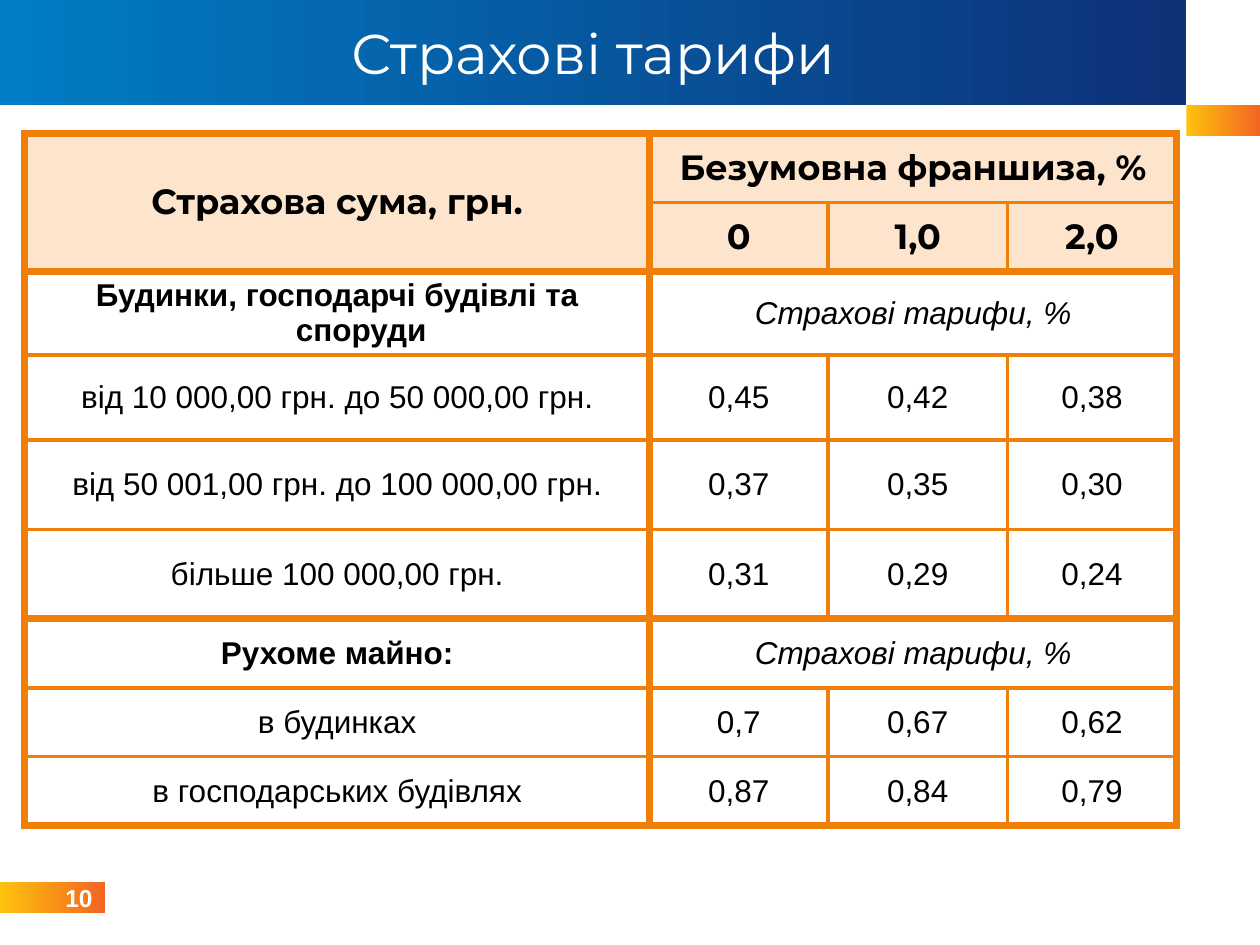
from itertools import accumulate

from lxml.etree import SubElement
from pptx import Presentation
from pptx.dml.color import RGBColor
from pptx.enum.shapes import MSO_SHAPE
from pptx.enum.text import MSO_ANCHOR, PP_ALIGN
from pptx.oxml.ns import qn
from pptx.util import Pt

COLORS = {
    "blue": "007DC5", "navy": "0E3178", "yellow": "FFC20E", "red": "F26522",
    "border": "F07F09", "header": "FDE5CD", "black": "000000", "white": "FFFFFF",
}
THICK, THIN, HANG = 4.5, 2.25, 27.4
COL_WIDTHS = (357, 102, 102.4, 96.8)
ROW_HEIGHTS = (39.4, 39.4, 48, 48.6, 51.1, 51.1, 39.4, 39.4, 39.4)
THICK_ROWS, THICK_COLS = {0, 2, 6, 9}, {0, 1, 4}
HEADER_ROWS, SECTION_ROWS = {0, 1}, {2, 6}
SPANS = {(0, 0): (2, 1), (0, 1): (1, 3), (2, 1): (1, 3), (6, 1): (1, 3)}
ROWS = (
    ("Страхова сума, грн.", "Безумовна франшиза, %"),
    ("", "0", "1,0", "2,0"),
    ("Будинки, господарчі будівлі та споруди", "Страхові тарифи, %"),
    ("від 10 000,00 грн. до 50 000,00 грн.", "0,45", "0,42", "0,38"),
    ("від 50 001,00 грн. до 100 000,00 грн.", "0,37", "0,35", "0,30"),
    ("більше 100 000,00 грн.", "0,31", "0,29", "0,24"),
    ("Рухоме майно:", "Страхові тарифи, %"),
    ("в будинках", "0,7", "0,67", "0,62"),
    ("в господарських будівлях", "0,87", "0,84", "0,79"),
)


def rgb(name):
    return RGBColor.from_string(COLORS[name])


def style(p, align, font, size, color, bold=False, italic=False):
    p.alignment = align
    f = p.font
    f.name, f.size, f.bold, f.italic = font, Pt(size), bold, italic
    f.color.rgb = rgb(color)


def add_band(s, box, start, end):
    sp = s.shapes.add_shape(MSO_SHAPE.RECTANGLE, *map(Pt, box))
    sp.shadow.inherit = False
    sp.line.fill.background()
    sp.fill.gradient()
    sp.fill.gradient_angle = 0
    for stop, name in zip(sp.fill.gradient_stops, (start, end)):
        stop.color.rgb = rgb(name)
    return sp


def add_label(sp, text, *font_style):
    tf = sp.text_frame
    tf.word_wrap = False
    tf.vertical_anchor = MSO_ANCHOR.MIDDLE
    p = tf.paragraphs[0]
    p.text = text
    style(p, *font_style)


def add_title(s, box):
    add_label(add_band(s, box, "blue", "navy"), "Страхові тарифи",
              PP_ALIGN.CENTER, "Montserrat", 32, "white")


def add_page_number(s, box):
    add_label(add_band(s, box, "yellow", "red"), "10",
              PP_ALIGN.RIGHT, "Arial", 14, "white", True)


def set_borders(cell, row, col, height, width):
    edges = (
        ("a:lnL", col in THICK_COLS),
        ("a:lnR", col + width in THICK_COLS),
        ("a:lnT", row in THICK_ROWS),
        ("a:lnB", row + height in THICK_ROWS),
    )
    tc_pr = cell._tc.get_or_add_tcPr()
    for tag, thick in edges:
        ln = SubElement(tc_pr, qn(tag), w=str(Pt(THICK if thick else THIN)))
        fill = SubElement(ln, qn("a:solidFill"))
        SubElement(fill, qn("a:srgbClr"), val=COLORS["border"])


def fill_cell(cell, row, col, text):
    header = row in HEADER_ROWS
    section = row in SECTION_ROWS
    cell.vertical_anchor = MSO_ANCHOR.MIDDLE
    p = cell.text_frame.paragraphs[0]
    p.text = text
    if row < 6:
        p_pr = p._p.get_or_add_pPr()
        p_pr.set("marL", str(Pt(HANG)))
        p_pr.set("indent", str(-Pt(HANG)))
    style(p, PP_ALIGN.CENTER, "Montserrat" if header else "Arial",
          20 if header else 18, "black",
          header or (section and col == 0), section and col > 0)


def add_rates(s, left, top):
    size = (sum(COL_WIDTHS), sum(ROW_HEIGHTS))
    frame = s.shapes.add_table(len(ROW_HEIGHTS), len(COL_WIDTHS),
                               *map(Pt, (left, top, *size)))
    table = frame.table
    for column, width in zip(table.columns, COL_WIDTHS):
        column.width = Pt(width)
    for row, height in zip(table.rows, ROW_HEIGHTS):
        row.height = Pt(height)
    for (r, c), (height, width) in SPANS.items():
        table.cell(r, c).merge(table.cell(r + height - 1, c + width - 1))
    for r in range(len(ROW_HEIGHTS)):
        for c in range(len(COL_WIDTHS)):
            cell = table.cell(r, c)
            set_borders(cell, r, c, *SPANS.get((r, c), (1, 1)))
            if r in HEADER_ROWS:
                cell.fill.solid()
                cell.fill.fore_color.rgb = rgb("header")
            else:
                cell.fill.background()
            if not cell.is_spanned:
                fill_cell(cell, r, c, ROWS[r][c])


def main():
    prs = Presentation()
    prs.slide_width, prs.slide_height = Pt(720), Pt(540)
    s = prs.slides.add_slide(prs.slide_layouts[6])
    add_title(s, (0, 0, 678, 60))
    add_band(s, (678, 60, 42, 18), "yellow", "red")
    add_page_number(s, (0, 504, 60, 18))
    add_rates(s, 14.2, 76.2)
    prs.save("out.pptx")


if __name__ == "__main__":
    main()
